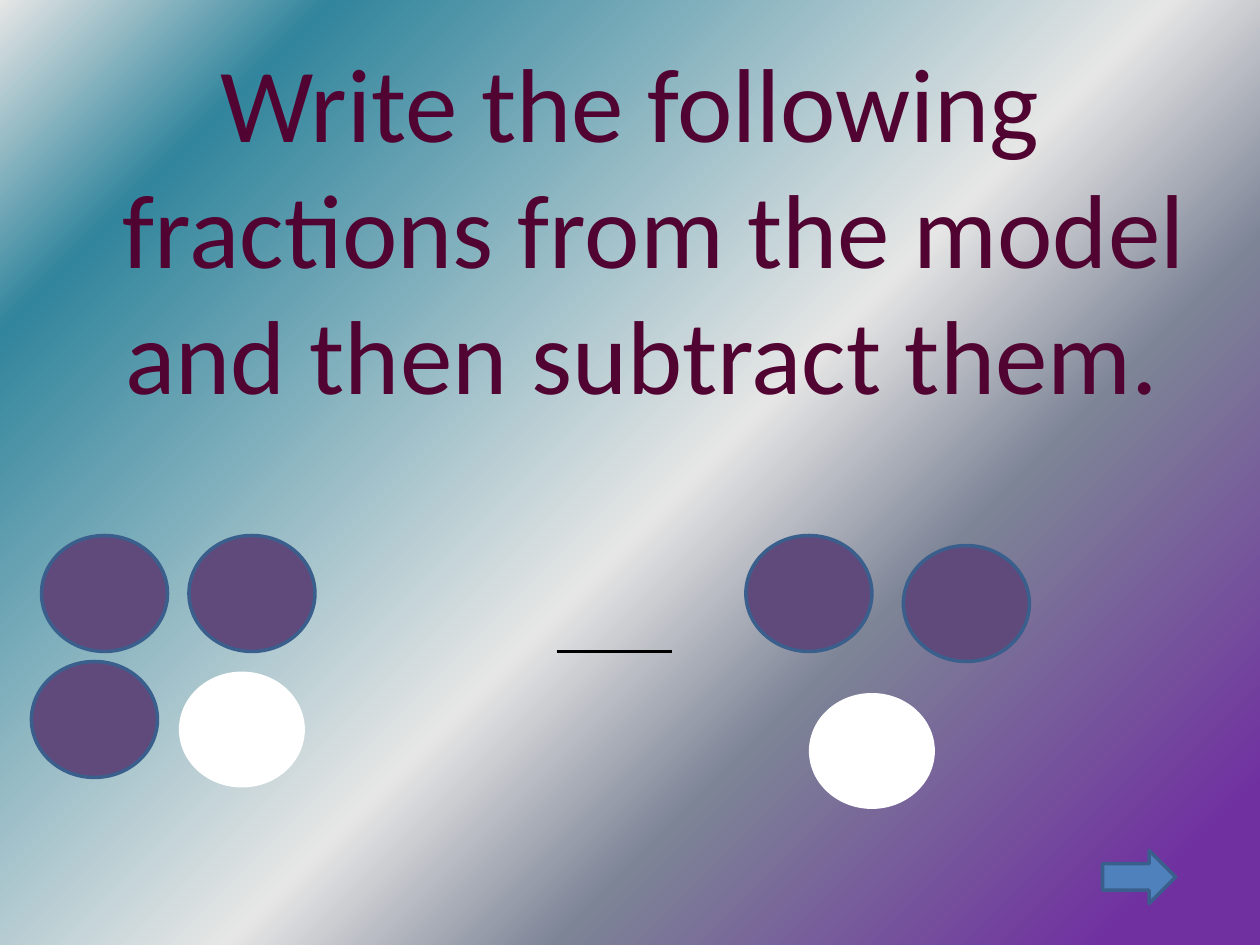
from lxml import etree
from pptx import Presentation
from pptx.dml.color import RGBColor
from pptx.enum import shapes, text
from pptx.oxml import parse_xml
from pptx.oxml.ns import nsdecls, qn
from pptx.util import Cm, Pt

INCH = 2.54
COLORS = {
    "wine": "510331", "plum": "604A7B", "white": "FFFFFF",
    "black": "000000", "blue": "4F81BD", "edge": "3A5F8C",
}
STOPS = [(0, "7030A0"), (7, "7030A0"), (32, "7D8496"),
         (47, "E6E6E6"), (85, "31859C"), (100, "E6E6E6")]


def dist(inches):
    return Cm(inches * INCH)


def tint(name):
    return RGBColor.from_string(COLORS[name])


class Deck:
    font = "Calibri"
    size = Pt(60)
    edge = Pt(2)

    def __init__(self, wide, high):
        self.prs = Presentation()
        self.prs.slide_width, self.prs.slide_height = dist(wide), dist(high)
        self.slide = self.prs.slides.add_slide(self.prs.slide_layouts[5])

    def back(self, stops):
        fill = self.slide.background.fill
        fill.solid()
        marks = "".join(
            f'<a:gs pos="{pos * 1000}"><a:srgbClr val="{rgb}"/></a:gs>'
            for pos, rgb in stops)
        grad = parse_xml(
            f'<a:gradFill {nsdecls("a")} rotWithShape="1">'
            f'<a:gsLst>{marks}</a:gsLst><a:path path="circle">'
            '<a:fillToRect l="100000" t="100000"/></a:path>'
            '<a:tileRect r="-100000" b="-100000"/></a:gradFill>')
        props = self.slide.background._cSld.bg.bgPr
        props.replace(props.find(qn("a:solidFill")), grad)

    def title(self, words, left, top, wide, high):
        box = self.slide.shapes.title
        box.left, box.top = dist(left), dist(top)
        box.width, box.height = dist(wide), dist(high)
        frame = box.text_frame
        frame.word_wrap = True
        frame.auto_size = text.MSO_AUTO_SIZE.NONE
        frame.vertical_anchor = text.MSO_ANCHOR.TOP
        para = frame.paragraphs[0]
        para.alignment = text.PP_ALIGN.CENTER
        para.space_before = Pt(12)
        # Hanging indent
        props = para._p.get_or_add_pPr()
        props.set("marL", str(dist(0.38)))
        props.set("indent", str(-dist(0.38)))
        run = para.add_run()
        run.text = words
        run.font.name, run.font.size = self.font, self.size
        run.font.color.rgb = tint("wine")

    def shape(self, kind, left, top, wide, high, fill, edge=None):
        item = self.slide.shapes.add_shape(
            kind, dist(left), dist(top), dist(wide), dist(high))
        item.shadow.inherit = False
        item.fill.solid()
        item.fill.fore_color.rgb = tint(fill)
        if edge:
            item.line.color.rgb = tint(edge)
            item.line.width = self.edge
        else:
            item.line.fill.background()

    def disc(self, left, top, full):
        self.shape(shapes.MSO_SHAPE.OVAL, left, top, 1, 0.92,
                   "plum" if full else "white", "edge" if full else None)

    def line(self, left, right, top):
        item = self.slide.shapes.add_connector(
            shapes.MSO_CONNECTOR.STRAIGHT,
            dist(left), dist(top), dist(right), dist(top))
        item.line.color.rgb = tint("black")
        item.line.width = self.edge
        etree.SubElement(item._element.spPr, qn("a:effectLst"))


def main():
    deck = Deck(10, 7.5)
    deck.back(STOPS)

    # Task
    deck.title("Write the following fractions from the model "
               "and then subtract them. ", 0.25, 0.25, 9.5, 6.12)

    # Minus sign and next arrow
    deck.line(4.42, 5.33, 5.17)
    deck.shape(shapes.MSO_SHAPE.RIGHT_ARROW, 8.75, 6.75, 0.58, 0.42,
               "blue", "edge")

    # Three fourths, then two thirds
    fourths = [(0.33, 4.25, True), (1.5, 4.25, True),
               (0.25, 5.25, True), (1.42, 5.33, False)]
    thirds = [(7.17, 4.33, True), (5.92, 4.25, True), (6.42, 5.5, False)]
    for left, top, full in fourths + thirds:
        deck.disc(left, top, full)

    deck.prs.save("out.pptx")


if __name__ == "__main__":
    main()
